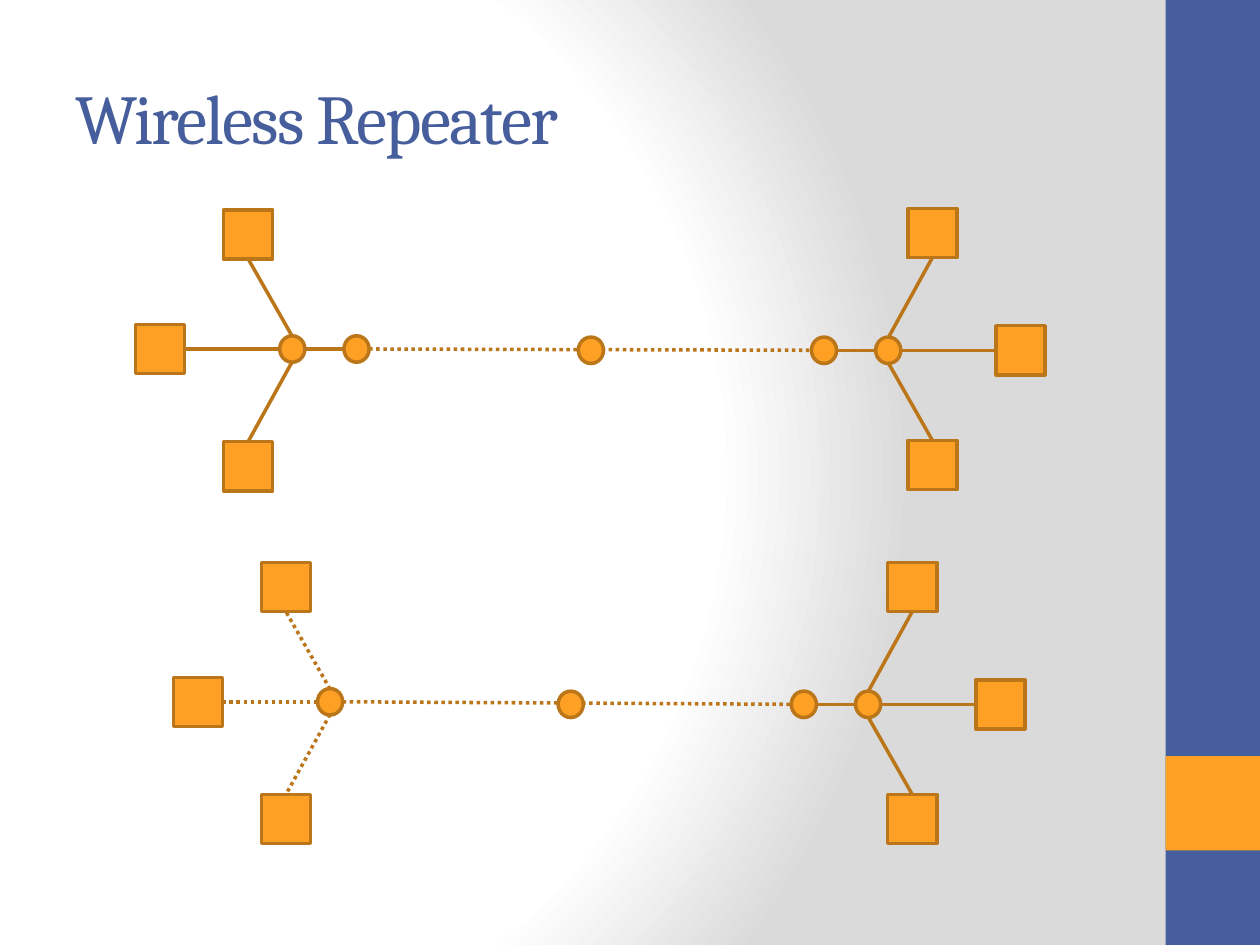
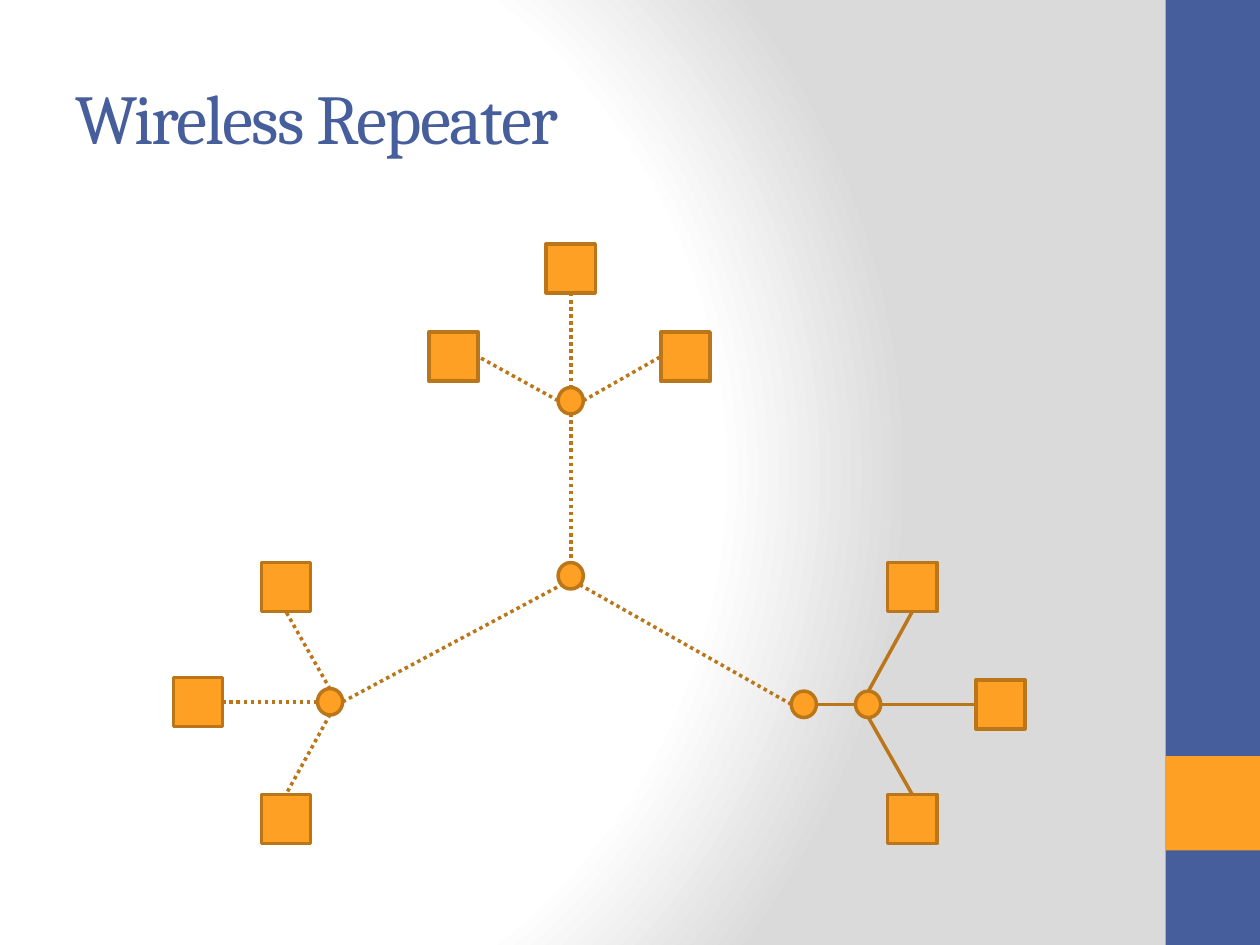
from lxml import etree
from pptx import Presentation
from pptx import util as u
from pptx.dml.color import RGBColor
from pptx.enum import dml, shapes, text
from pptx.oxml import parse_xml
from pptx.oxml.ns import nsdecls, qn

COLORS = {
    "blue": "465E9C",
    "orange": "FDA023",
    "outline": "BB761A",
    "white": "FFFFFF",
    "gray": "DADADA",
}
FONT = "Cambria"
LINE_WIDTH = u.Pt(2)

STATION_SIZE = 0.39
NODE_WIDTH, NODE_HEIGHT = 0.2, 0.21
NODE_RADIUS = 0.1
BRIDGE_GAP = 0.51
# Station centres relative to a hub: (outward, sideways)
FAR_STATION = 1.05
SIDE_STATIONS = [(0.35, -0.93), (0.35, 0.91)]

LEFT, RIGHT, UP = (-1, 0), (1, 0), (0, -1)


def color(name):
    return RGBColor.from_string(COLORS[name])


def set_background(slide):
    fill = slide.background.fill
    fill.solid()
    stops = "".join(
        f'<a:gs pos="{percent * 1000}"><a:srgbClr val="{COLORS[name]}"/></a:gs>'
        for percent, name in [(0, "white"), (75, "white"), (100, "gray")]
    )
    gradient = parse_xml(
        f'<a:gradFill rotWithShape="1" {nsdecls("a")}><a:gsLst>{stops}</a:gsLst>'
        '<a:path path="circle">'
        '<a:fillToRect l="20000" t="50000" r="100000" b="50000"/>'
        "</a:path></a:gradFill>"
    )
    solid = next(slide.background._cSld.iter(qn("a:solidFill")))
    solid.getparent().replace(solid, gradient)


def add_filled(slide, kind, left, top, width, height, fill):
    shape = slide.shapes.add_shape(
        kind, u.Inches(left), u.Inches(top), u.Inches(width), u.Inches(height)
    )
    shape.shadow.inherit = False
    shape.fill.solid()
    shape.fill.fore_color.rgb = color(fill)
    shape.line.fill.background()
    return shape


def add_title(slide, wording):
    box = slide.shapes.add_textbox(
        u.Inches(0.5), u.Inches(0.3), u.Inches(8.33), u.Inches(1.25)
    )
    frame = box.text_frame
    frame.word_wrap = True
    frame.vertical_anchor = text.MSO_ANCHOR.MIDDLE
    frame.text = wording
    span = frame.paragraphs[0].runs[0]
    span.font.name = FONT
    span.font.size = u.Pt(40)
    span.font.color.rgb = color("blue")
    span.font._element.set("spc", "-100")


def add_page(deck, title):
    page = deck.slides.add_slide(deck.slide_layouts[6])
    set_background(page)
    rectangle = shapes.MSO_SHAPE.RECTANGLE
    add_filled(page, rectangle, 9.25, 0, 0.75, 7.5, "blue")
    add_filled(page, rectangle, 9.25, 6, 0.75, 0.75, "orange")
    add_title(page, title)
    return page


def add_device(slide, kind, center, width, height):
    x, y = center
    device = add_filled(
        slide, kind, x - width / 2, y - height / 2, width, height, "orange"
    )
    device.line.color.rgb = color("outline")
    device.line.width = LINE_WIDTH


def add_station(slide, center):
    add_device(slide, shapes.MSO_SHAPE.RECTANGLE, center, STATION_SIZE, STATION_SIZE)


def add_node(slide, center):
    add_device(slide, shapes.MSO_SHAPE.OVAL, center, NODE_WIDTH, NODE_HEIGHT)


def add_link(slide, start, end, wireless):
    link = slide.shapes.add_connector(
        shapes.MSO_CONNECTOR.STRAIGHT, *(u.Inches(value) for value in start + end)
    )
    link.line.color.rgb = color("outline")
    link.line.width = LINE_WIDTH
    if wireless:
        link.line.dash_style = dml.MSO_LINE.ROUND_DOT
    etree.SubElement(link._element.spPr, qn("a:effectLst"))


def add_cluster(slide, hub, outward, wireless):
    """Draw a hub with three stations; return the point where its uplink starts.

    A wired cluster reaches its uplink through a bridge node.
    """
    dx, dy = outward

    def place(along, across):
        return hub[0] + along * dx - across * dy, hub[1] + along * dy + across * dx

    half = STATION_SIZE / 2
    add_link(slide, place(NODE_RADIUS, 0), place(FAR_STATION - half, 0), wireless)
    add_station(slide, place(FAR_STATION, 0))
    for along, across in SIDE_STATIONS:
        side = 1 if across > 0 else -1
        add_link(
            slide,
            place(0, side * NODE_RADIUS),
            place(along, across - side * half),
            wireless,
        )
        add_station(slide, place(along, across))
    add_node(slide, hub)
    if wireless:
        return place(-NODE_RADIUS, 0)
    add_link(
        slide, place(-NODE_RADIUS, 0), place(NODE_RADIUS - BRIDGE_GAP, 0), wireless
    )
    add_node(slide, place(-BRIDGE_GAP, 0))
    return place(-BRIDGE_GAP - NODE_RADIUS, 0)


def add_repeater_chain(slide, left_hub, right_hub, repeater, left_wireless):
    left_end = add_cluster(slide, left_hub, LEFT, left_wireless)
    right_end = add_cluster(slide, right_hub, RIGHT, False)
    add_link(slide, left_end, right_end, True)
    add_node(slide, repeater)


def add_repeater_star(slide, repeater, clusters):
    """Join each (hub, outward, wireless, contact offset) to one repeater."""
    x, y = repeater
    for hub, outward, wireless, (dx, dy) in clusters:
        uplink = add_cluster(slide, hub, outward, wireless)
        add_link(slide, uplink, (x + dx, y + dy), True)
    add_node(slide, repeater)


def main():
    deck = Presentation()
    deck.slide_width, deck.slide_height = u.Inches(10), u.Inches(7.5)
    title = "Wireless Repeater"
    lower_left, lower_right = (2.62, 5.57), (6.89, 5.59)

    chains = add_page(deck, title)
    add_repeater_chain(chains, (2.32, 2.77), (7.05, 2.78), (4.69, 2.78), False)
    add_repeater_chain(chains, lower_left, lower_right, (4.53, 5.59), True)

    star = add_page(deck, title)
    add_repeater_star(
        star,
        (4.53, 4.57),
        [
            (lower_right, RIGHT, False, (0.07, 0.07)),
            (lower_left, LEFT, True, (-0.07, 0.07)),
            ((4.53, 3.18), UP, True, (0, -NODE_RADIUS)),
        ],
    )
    deck.save("out.pptx")


if __name__ == "__main__":
    main()
